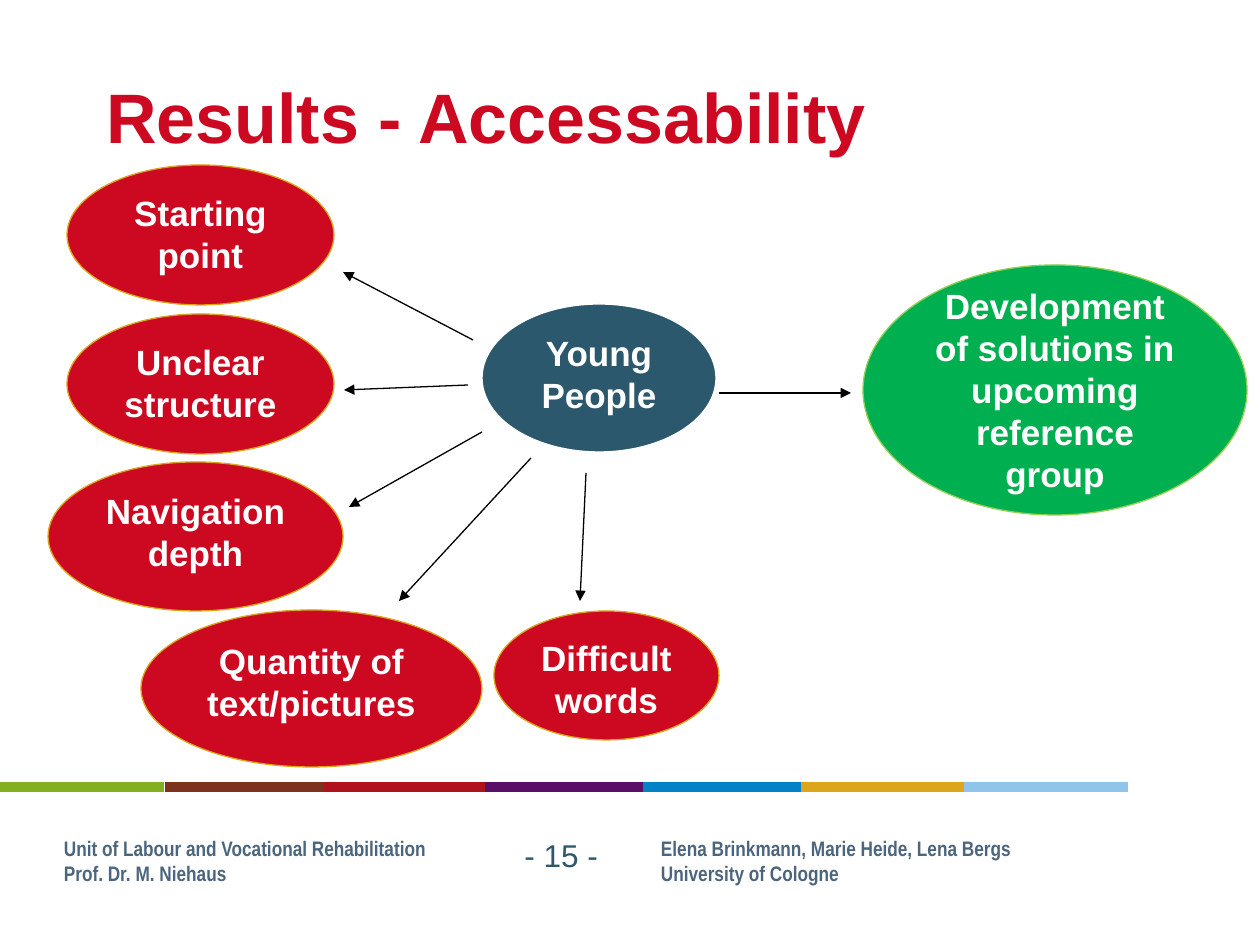
from lxml import etree
from pptx import Presentation
from pptx import util as u
from pptx.dml.color import RGBColor
from pptx.enum import shapes, text
from pptx.oxml.ns import qn

EMU_PER_PX = 914400 / 126
WHITE, RED, NAVY, GOLD = "FFFFFF", "CD0921", "2B586C", "DBA619"


def px(*lengths):
    return [u.Emu(round(length * EMU_PER_PX)) for length in lengths]


def color(value):
    return RGBColor.from_string(value)


def write(shape, lines, size, ink, bold=True, font="Arial",
          align=text.PP_ALIGN.LEFT, anchor=text.MSO_ANCHOR.TOP, wrap=True):
    frame = shape.text_frame
    frame.text = "\n".join(lines)
    frame.word_wrap = wrap
    frame.vertical_anchor = anchor
    for para in frame.paragraphs:
        para.alignment = align
        para.font.name = font
        para.font.size = u.Pt(size)
        para.font.bold = bold
        para.font.color.rgb = color(ink)


def add_line(page, start, end, ink, points):
    line = page.shapes.add_connector(
        shapes.MSO_CONNECTOR.STRAIGHT, *px(*start, *end))
    line.line.color.rgb = color(ink)
    line.line.width = u.Pt(points)
    etree.SubElement(line._element.spPr, qn("a:effectLst"))
    return line


def add_arrow(page, start, end):
    arrow = add_line(page, start, end, "000000", 0.75)
    etree.SubElement(arrow.line._get_or_add_ln(), qn("a:tailEnd"), type="triangle")


def add_bubble(page, box, label, fill, outline, anchor=text.MSO_ANCHOR.TOP):
    bubble = page.shapes.add_shape(shapes.MSO_SHAPE.OVAL, *px(*box))
    bubble.shadow.inherit = False
    bubble.fill.solid()
    bubble.fill.fore_color.rgb = color(fill)
    bubble.line.color.rgb = color(outline)
    bubble.line.width = u.Pt(0.75)
    write(bubble, [label], 20, WHITE, align=text.PP_ALIGN.CENTER, anchor=anchor)


def add_ribbon(page, top):
    """Row of coloured bars across the foot of the slide."""
    bars = {0: "83AF23", 165: "7D321D", 324: "AF111D", 485: "590F68",
            643: "0082C6", 801: GOLD, 964: "91C4EA"}
    for left, ink in bars.items():
        add_line(page, (left, top), (left + 164, top), ink, 5.5)


def add_credit(page, left, top, lines):
    credit = page.shapes.add_shape(
        shapes.MSO_SHAPE.RECTANGLE, *px(left, top, 199, 63))
    credit.shadow.inherit = False
    credit.fill.solid()
    credit.fill.fore_color.rgb = color(WHITE)
    credit.line.fill.background()
    credit.text_frame.margin_left = 0
    write(credit, lines, 12, "4A657D", font="Arial Narrow", wrap=False)


def add_footer(page, top):
    add_ribbon(page, top)
    add_credit(page, 64, top + 42, ["Unit of Labour and Vocational Rehabilitation",
                                    "Prof. Dr. M. Niehaus"])
    number = page.shapes.add_textbox(*px(512, top + 43, 138, 50))
    write(number, ["- 15 -"], 18, NAVY, bold=False)
    add_credit(page, 661, top + 42, ["Elena Brinkmann, Marie Heide, Lena Bergs",
                                     "University of Cologne"])


def add_title(page, box, title):
    heading = page.shapes.add_textbox(*px(*box))
    write(heading, [title], 40, RED, anchor=text.MSO_ANCHOR.MIDDLE)


def add_diagram(page):
    """Young people in the centre, their barriers around, the outcome at right."""
    add_bubble(page, (482, 304, 234, 148), "Young People", NAVY, WHITE)
    barriers = [
        ("Starting point", (67, 165, 267, 140), (473, 340), (343, 272)),
        ("Unclear structure", (67, 314, 267, 140), (468, 385), (344, 390)),
        ("Navigation depth", (48, 462, 295, 149), (482, 432), (349, 507)),
        ("Quantity of text/pictures", (141, 610, 341, 157), (531, 458), (399, 601)),
        ("Difficult words", (494, 611, 225, 129), (586, 473), (580, 601)),
    ]
    for label, box, start, end in barriers:
        add_bubble(page, box, label, RED, GOLD)
        add_arrow(page, start, end)
    add_bubble(page, (863, 265, 384, 250),
               "Development of solutions in upcoming reference group",
               "00B050", "92D050", text.MSO_ANCHOR.MIDDLE)
    add_arrow(page, (719, 393), (851, 393))


def main():
    deck = Presentation()
    deck.slide_width, deck.slide_height = px(1260, 945)
    page = deck.slides.add_slide(deck.slide_layouts[6])
    add_footer(page, 787)
    add_title(page, (94, 37, 1071, 157), "Results - Accessability")
    add_diagram(page)
    deck.save("out.pptx")


if __name__ == "__main__":
    main()
